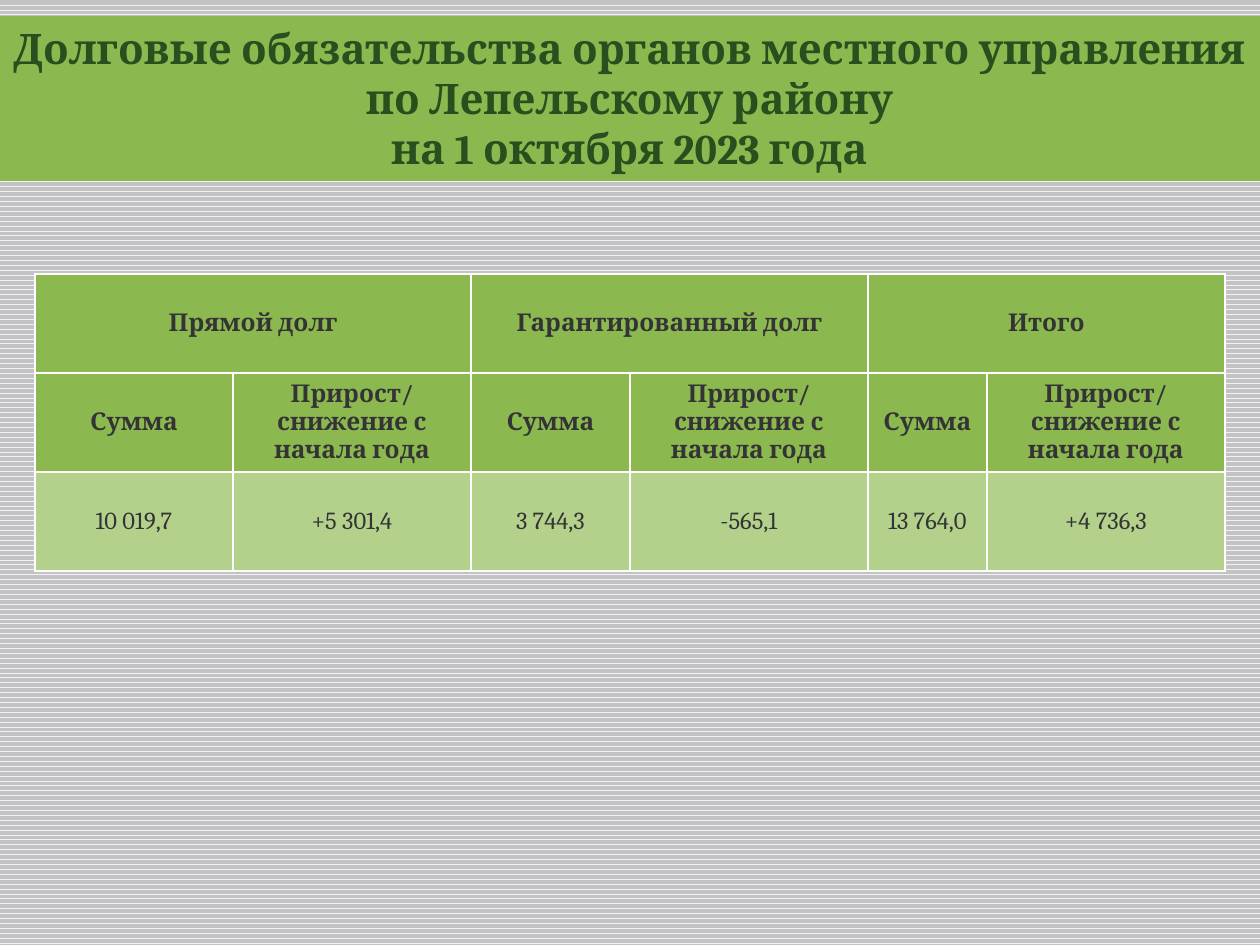
from lxml.etree import SubElement
from pptx import Presentation
from pptx.dml.color import RGBColor
from pptx.enum.dml import MSO_PATTERN
from pptx.enum.shapes import MSO_SHAPE
from pptx.enum.text import MSO_ANCHOR, PP_ALIGN
from pptx.oxml.ns import qn
from pptx.util import Pt

EMU_PER_PX = 914400 / 126
GREEN = RGBColor(0x8C, 0xB9, 0x4F)
LIGHT_GREEN = RGBColor(0xB3, 0xD1, 0x8B)
DARK_GREEN = RGBColor(0x28, 0x4F, 0x1D)
CHARCOAL = RGBColor(0x34, 0x34, 0x36)
PALE_GRAY = RGBColor(0xF2, 0xF2, 0xF2)
GRAY = RGBColor(0xC3, 0xC2, 0xC5)

TITLE_FORMAT = {"name": "Cambria", "size": Pt(24), "bold": True}
HEADER_FORMAT = {"name": "Cambria", "size": Pt(14), "bold": True}
VALUE_FORMAT = {**HEADER_FORMAT, "bold": False}

TITLE_LINES = [
    "Долговые обязательства органов местного управления",
    "по Лепельскому району",
    "на 1 октября 2023 года",
]
DEBT_KINDS = ["Прямой долг", "Гарантированный долг", "Итого"]
MEASURES = ["Сумма", "Прирост/снижение с начала года"]
VALUES = ["10 019,7", "+5 301,4", "3 744,3", "-565,1", "13 764,0", "+4 736,3"]
COLUMN_WIDTHS = [198, 238, 159, 238, 119, 238]


def px(length):
    return round(length * EMU_PER_PX)


def write_lines(text_frame, lines, font_format, color):
    """Write centred paragraphs, one for each line."""
    text_frame.word_wrap = True
    for index, line in enumerate(lines):
        paragraph = text_frame.add_paragraph() if index else text_frame.paragraphs[0]
        paragraph.alignment = PP_ALIGN.CENTER
        run = paragraph.add_run()
        run.text = line
        for name, value in font_format.items():
            setattr(run.font, name, value)
        run.font.color.rgb = color


def add_cell_borders(cell):
    """Draw white one-point lines; call before the cell is filled."""
    properties = cell._tc.get_or_add_tcPr()
    for side in ("a:lnL", "a:lnR", "a:lnT", "a:lnB"):
        line = SubElement(properties, qn(side), w=str(Pt(1)))
        fill = SubElement(line, qn("a:solidFill"))
        SubElement(fill, qn("a:srgbClr"), val="FFFFFF")


def fill_background(slide):
    fill = slide.background.fill
    fill.patterned()
    fill.pattern = MSO_PATTERN.WAVE
    fill.fore_color.rgb = PALE_GRAY
    fill.back_color.rgb = GRAY


def add_title_band(slide, left, top, width, height):
    band = slide.shapes.add_shape(
        MSO_SHAPE.RECTANGLE, px(left), px(top), px(width), px(height))
    band.shadow.inherit = False
    band.fill.solid()
    band.fill.fore_color.rgb = GREEN
    band.line.fill.background()
    band.text_frame.vertical_anchor = MSO_ANCHOR.TOP
    write_lines(band.text_frame, TITLE_LINES, TITLE_FORMAT, DARK_GREEN)


def add_debt_table(slide, left, top, row_height):
    kind_row = [text for kind in DEBT_KINDS for text in (kind, "")]
    rows = [
        (kind_row, HEADER_FORMAT, GREEN),
        (MEASURES * len(DEBT_KINDS), HEADER_FORMAT, GREEN),
        (VALUES, VALUE_FORMAT, LIGHT_GREEN),
    ]
    table = slide.shapes.add_table(
        len(rows), len(COLUMN_WIDTHS), px(left), px(top),
        px(sum(COLUMN_WIDTHS)), px(row_height * len(rows))).table
    for column, width in zip(table.columns, COLUMN_WIDTHS):
        column.width = px(width)
    for row_index, (texts, font_format, color) in enumerate(rows):
        table.rows[row_index].height = px(row_height)
        for column_index, text in enumerate(texts):
            cell = table.cell(row_index, column_index)
            add_cell_borders(cell)
            cell.fill.solid()
            cell.fill.fore_color.rgb = color
            cell.vertical_anchor = MSO_ANCHOR.MIDDLE
            if text:
                write_lines(cell.text_frame, [text], font_format, CHARCOAL)
    for first in range(0, len(COLUMN_WIDTHS), len(MEASURES)):
        table.cell(0, first).merge(table.cell(0, first + len(MEASURES) - 1))


def main():
    presentation = Presentation()
    presentation.slide_width = px(1260)
    presentation.slide_height = px(945)
    slide = presentation.slides.add_slide(presentation.slide_layouts[6])
    fill_background(slide)
    add_debt_table(slide, left=35, top=274, row_height=99)
    add_title_band(slide, left=-1, top=16, width=1261, height=165)
    presentation.save("out.pptx")


if __name__ == "__main__":
    main()
